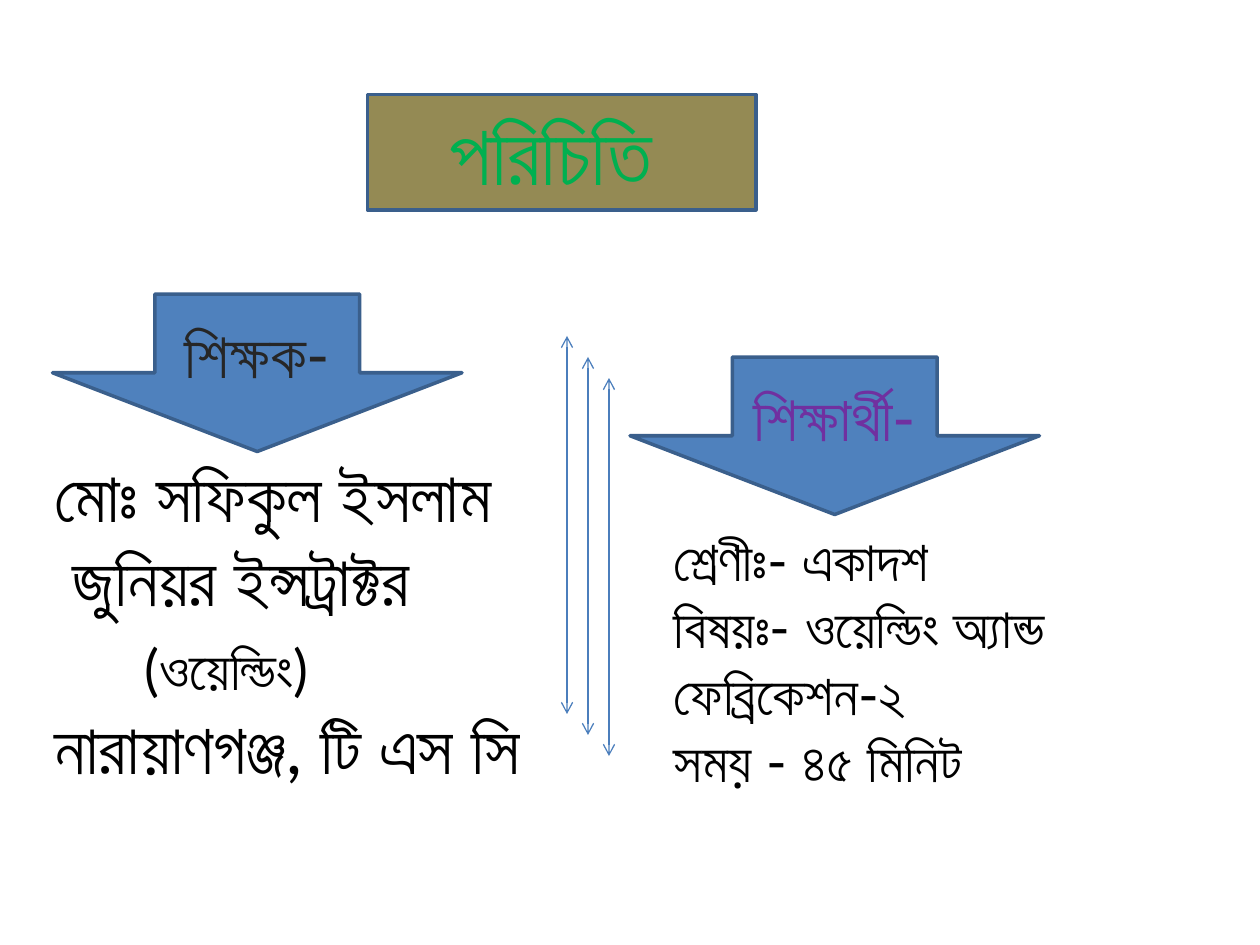
from lxml.etree import SubElement
from pptx import Presentation
from pptx.dml.color import RGBColor
from pptx.enum.shapes import MSO_CONNECTOR, MSO_SHAPE
from pptx.enum.text import MSO_ANCHOR, MSO_AUTO_SIZE, PP_ALIGN
from pptx.oxml.ns import qn
from pptx.util import Inches, Pt

UNIT = Inches(1) // 12  # the grid has 120 columns and 90 rows
FONT = "Lato"
YA, NUKTA, YYA = chr(0x9AF), chr(0x9BC), chr(0x9DF)
BLACK = RGBColor(0x00, 0x00, 0x00)
CHARCOAL = RGBColor(0x26, 0x26, 0x26)
GREEN = RGBColor(0x00, 0xB0, 0x50)
PURPLE = RGBColor(0x70, 0x30, 0xA0)
OLIVE = RGBColor(0x94, 0x8A, 0x54)
BLUE = RGBColor(0x4F, 0x81, 0xBD)
EDGE_BLUE = RGBColor(0x3A, 0x5F, 0x8C)
LINE_BLUE = RGBColor(0x4B, 0x7E, 0xBC)


def grid(*cells):
    return [int(cell * UNIT) for cell in cells]


def add_run(paragraph, text, size, color):
    """Add a run in Bengali, with the letter yya as one character."""
    run = paragraph.add_run()
    run.text = text.replace(YA + NUKTA, YYA)
    run.font.size = Pt(size)
    run.font.name = FONT
    run.font.color.rgb = color
    SubElement(run.font._element, qn("a:cs"), typeface=FONT)


prs = Presentation()
prs.slide_width, prs.slide_height = grid(120, 90)
slide = prs.slides.add_slide(prs.slide_layouts[6])
shapes = slide.shapes

# Title and the two headings
headings = [
    (MSO_SHAPE.RECTANGLE, (35, 9, 37, 11), OLIVE, "পরিচিতি ", 48, GREEN),
    (MSO_SHAPE.DOWN_ARROW, (60, 34, 39, 15), BLUE, "শিক্ষার্থী-", 36, PURPLE),
    (MSO_SHAPE.DOWN_ARROW, (5, 28, 39, 15), BLUE, "শিক্ষক-", 36, CHARCOAL),
]
for kind, cells, fill, text, size, color in headings:
    heading = shapes.add_shape(kind, *grid(*cells))
    heading.shadow.inherit = False
    heading.fill.solid()
    heading.fill.fore_color.rgb = fill
    heading.line.color.rgb = EDGE_BLUE
    heading.line.width = Pt(2)
    heading.text_frame.vertical_anchor = MSO_ANCHOR.MIDDLE
    label = heading.text_frame.paragraphs[0]
    label.alignment = PP_ALIGN.CENTER
    add_run(label, text, size, color)

# Three stepped double arrows between teacher and class
for step in range(3):
    x, top = 54 + 2 * step, 32 + 2 * step
    divider = shapes.add_connector(MSO_CONNECTOR.STRAIGHT, *grid(x, top, x, top + 36))
    divider.line.color.rgb = LINE_BLUE
    divider.line.width = Pt(0.75)
    for end in ("a:headEnd", "a:tailEnd"):
        SubElement(divider.line._get_or_add_ln(), qn(end), type="arrow")
    SubElement(divider._element.spPr, qn("a:effectLst"))

# Details: each paragraph is a first-line indent in inches and its lines of runs (text, size)
teacher = [
    (0, [[("মোঃ সফিকুল ইসলাম ", 40)], [(" জুনিয়র ইন্সট্রাক্টর", 40)]]),
    (0.57, [[(" ", 40), ("(ওয়েল্ডিং)", 32)], [("নারায়াণগঞ্জ, টি এস সি", 40)]]),
]
lesson = [
    (0, [[("শ্রেণীঃ- একাদশ", 32)]]),
    (0, [[("বিষয়ঃ- ওয়েল্ডিং অ্যান্ড ফেব্রিকেশন-২", 32)]]),
    (0, [[("সময় - ৪৫ মিনিট", 32)]]),
]
for cells, paragraphs in [((63, 49.44, 43, 27.1), lesson), ((4, 42.5, 49, 33.5), teacher)]:
    frame = shapes.add_textbox(*grid(*cells)).text_frame
    frame.word_wrap = True
    frame.auto_size = MSO_AUTO_SIZE.SHAPE_TO_FIT_TEXT
    for i, (indent, lines) in enumerate(paragraphs):
        paragraph = frame.add_paragraph() if i else frame.paragraphs[0]
        if indent:
            properties = paragraph._p.get_or_add_pPr()
            properties.set("marL", "0")
            properties.set("indent", str(Inches(indent)))
        for j, runs in enumerate(lines):
            if j:
                paragraph.add_line_break()
            for text, size in runs:
                add_run(paragraph, text, size, BLACK)

prs.save("out.pptx")
